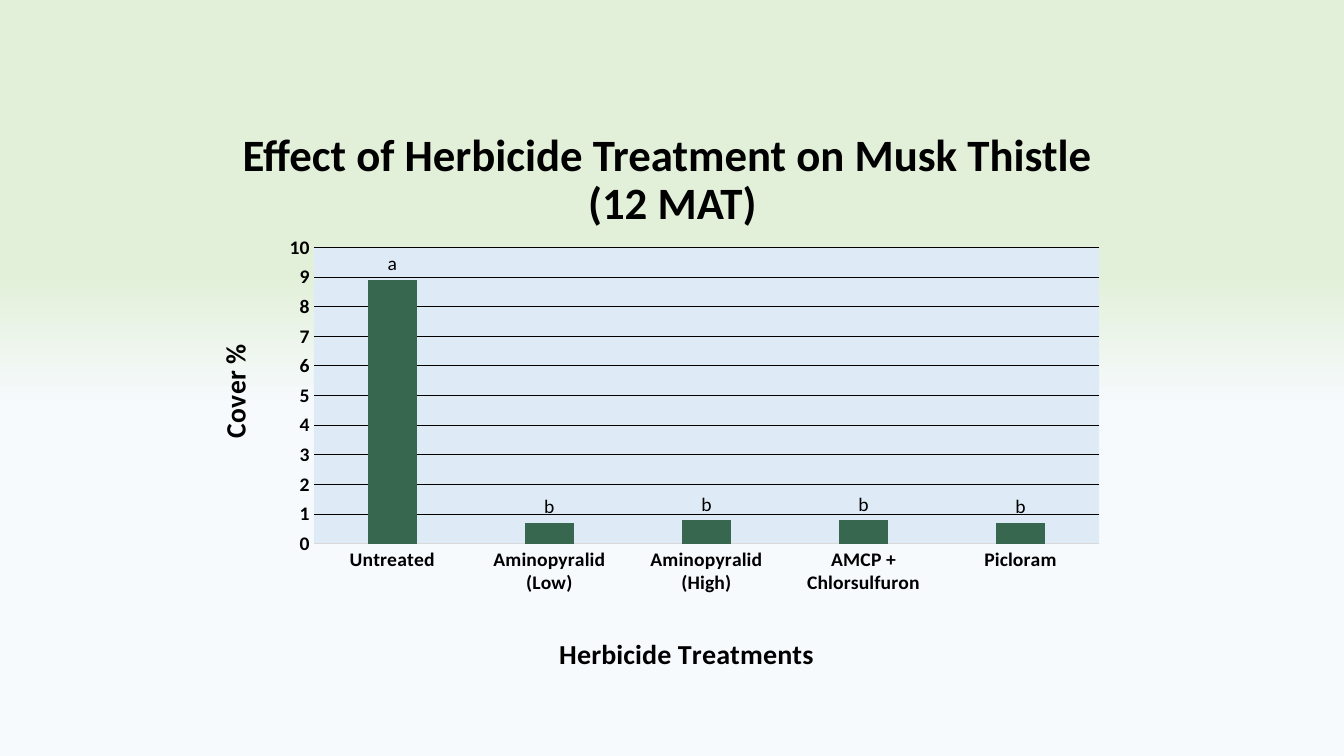
"""Build a slide with a column chart of musk thistle cover by herbicide treatment."""
from lxml import etree
from pptx import Presentation
from pptx.chart.data import CategoryChartData
from pptx.dml.color import RGBColor
from pptx.enum.chart import XL_CHART_TYPE, XL_LABEL_POSITION, XL_TICK_MARK
from pptx.enum.text import MSO_ANCHOR, PP_ALIGN
from pptx.oxml import parse_xml
from pptx.oxml.ns import nsdecls, qn
from pptx.util import Inches, Pt

COLUMNS = XL_CHART_TYPE.COLUMN_CLUSTERED
OUTSIDE_END = XL_LABEL_POSITION.OUTSIDE_END
NO_TICK = XL_TICK_MARK.NONE
MIDDLE = MSO_ANCHOR.MIDDLE
CENTER = PP_ALIGN.CENTER

BLACK = RGBColor(0x00, 0x00, 0x00)
PALE_GREEN = RGBColor(0xE2, 0xF0, 0xD9)
PALE_BLUE = RGBColor(0xF7, 0xFA, 0xFD)
PLOT_BLUE = RGBColor(0xDE, 0xEB, 0xF7)
AXIS_GRAY = RGBColor(0xD9, 0xD9, 0xD9)
BAR_GREEN = RGBColor(0x38, 0x67, 0x50)

TREATMENTS = [
    ("Untreated", 8.9, "a"),
    ("Aminopyralid (Low)", 0.7, "b"),
    ("Aminopyralid (High)", 0.8, "b"),
    ("AMCP + Chlorsulfuron", 0.8, "b"),
    ("Picloram", 0.7, "b"),
]


def write(frame, text, size, bold=True, spacing=None):
    """Put one centred black paragraph into a text frame."""
    frame.text = text
    para = frame.paragraphs[0]
    para.alignment = CENTER
    para.line_spacing = spacing
    for span in para.runs:
        span.font.name = "Calibri"
        span.font.size = Pt(size)
        span.font.bold = bold
        span.font.color.rgb = BLACK


def make_layout(**percents):
    """Return a manual chart layout from percentages of the chart size."""
    layout = parse_xml(f"<c:layout {nsdecls('c')}><c:manualLayout/></c:layout>")
    if "w" in percents:
        etree.SubElement(layout[0], qn("c:layoutTarget"), val="inner")
    for side in ("x", "y"):
        etree.SubElement(layout[0], qn(f"c:{side}Mode"), val="edge")
    for name, value in percents.items():
        etree.SubElement(layout[0], qn(f"c:{name}"), val=f"{value / 100:.4f}")
    return layout


deck = Presentation()
deck.slide_width = Inches(13.33)
deck.slide_height = Inches(7.5)
page = deck.slides.add_slide(deck.slide_layouts[6])

backdrop = page.background.fill
backdrop.gradient()
backdrop.gradient_angle = 270
for stop, position, color in zip(backdrop.gradient_stops, (0.36, 0.54), (PALE_GREEN, PALE_BLUE)):
    stop.position = position
    stop.color.rgb = color

title_box = page.shapes.add_textbox(Inches(2.17), Inches(1.17), Inches(9), Inches(1.25))
title_box.text_frame.word_wrap = True
title_box.text_frame.vertical_anchor = MIDDLE
write(title_box.text_frame, "Effect of Herbicide Treatment on Musk Thistle \v(12 MAT)", 32, spacing=0.9)

cover_data = CategoryChartData()
cover_data.categories = [name for name, cover, letter in TREATMENTS]
cover_data.add_series("Series 1", [cover for name, cover, letter in TREATMENTS])
chart = page.shapes.add_chart(
    COLUMNS, Inches(2), Inches(2.25), Inches(9.08), Inches(4.5), cover_data
).chart
chart.has_title = False
chart.has_legend = False
chart.font.name = "Calibri"
chart.font.size = Pt(10)
chart.font.color.rgb = BLACK

treatment_axis, cover_axis = chart.category_axis, chart.value_axis
for axis, title, left, top in (
    (treatment_axis, "Herbicide Treatments", 38.5, 90.5),
    (cover_axis, "Cover %", 0.9, 25.5),
):
    axis.major_tick_mark = NO_TICK
    axis.minor_tick_mark = NO_TICK
    axis.tick_labels.font.name = "Calibri"
    axis.tick_labels.font.size = Pt(14)
    axis.tick_labels.font.bold = True
    axis.tick_labels.font.color.rgb = BLACK
    write(axis.axis_title.text_frame, title, 20)
    title_element = axis.axis_title._element
    for old_layout in title_element.findall(qn("c:layout")):
        title_element.remove(old_layout)
    title_element.find(qn("c:tx")).addnext(make_layout(x=left, y=top))

cover_axis.axis_title.text_frame._txBody.bodyPr.set("rot", "-5400000")
cover_axis.axis_title.text_frame._txBody.bodyPr.set("vert", "horz")
treatment_axis.format.line.color.rgb = AXIS_GRAY
treatment_axis.format.line.width = Pt(0.75)
cover_axis.format.line.fill.background()
cover_axis.minimum_scale = 0
cover_axis.maximum_scale = 10
cover_axis.major_unit = 1
cover_axis.tick_labels.number_format = "General"
cover_axis.tick_labels.number_format_is_linked = False
cover_axis.major_gridlines.format.line.color.rgb = BLACK
cover_axis.major_gridlines.format.line.width = Pt(0.75)

plot = chart.plots[0]
plot.gap_width = 219
plot.overlap = -27
plot.vary_by_categories = False
bars = plot.series[0]
bars.format.fill.solid()
bars.format.fill.fore_color.rgb = BAR_GREEN
for index, (name, cover, letter) in enumerate(TREATMENTS):
    label = bars.points[index].data_label
    write(label.text_frame, letter, 14, bold=False)
    label.position = OUTSIDE_END

plot_area = chart._chartSpace.chart.plotArea
for old_layout in plot_area.findall(qn("c:layout")):
    plot_area.remove(old_layout)
plot_area.insert(0, make_layout(x=12.25, y=4.65, w=85.8, h=66.55))
plot_area.append(parse_xml(
    f"<c:spPr {nsdecls('c', 'a')}><a:solidFill>"
    f'<a:srgbClr val="{PLOT_BLUE}"/></a:solidFill></c:spPr>'
))

deck.save("out.pptx")
